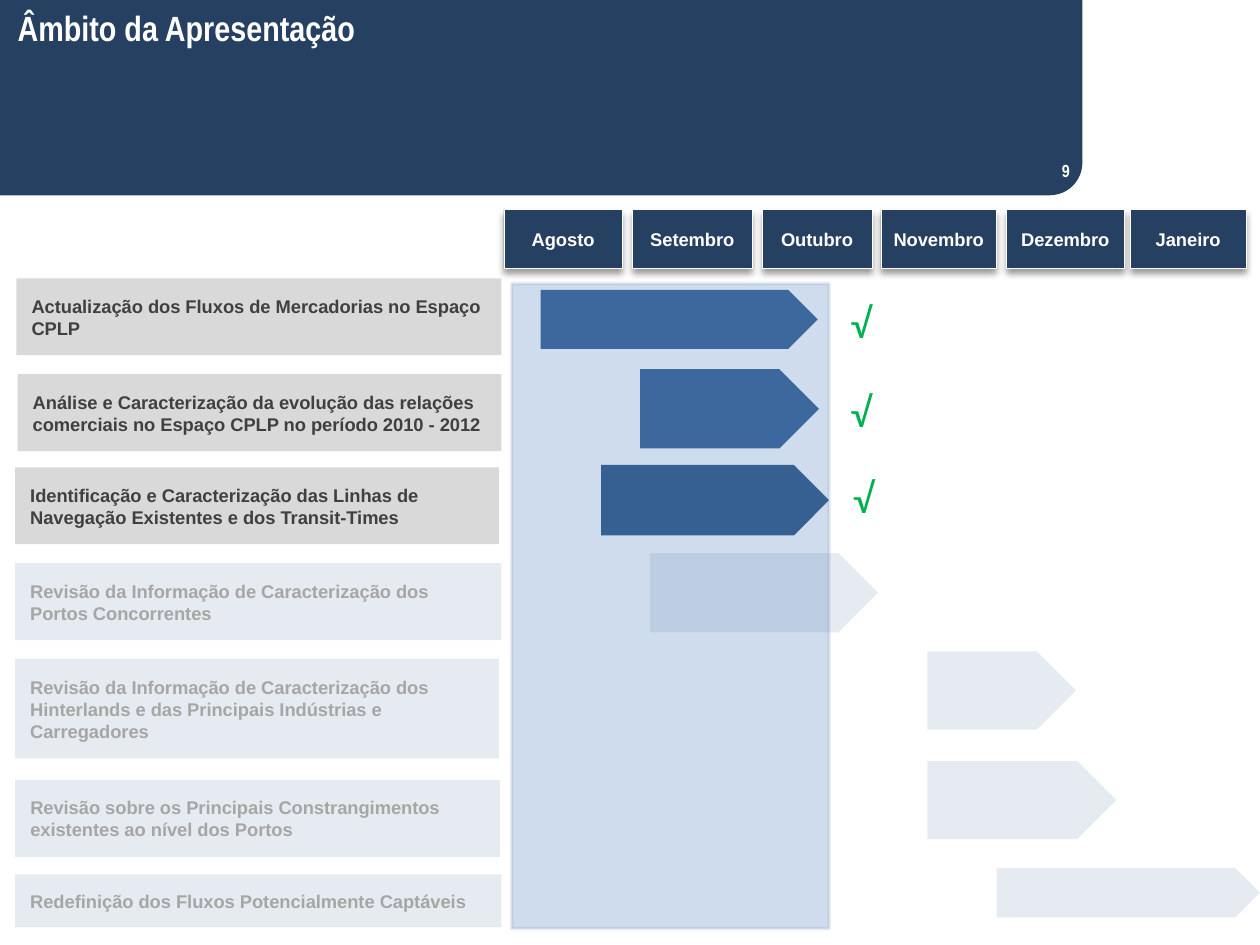
from dataclasses import dataclass
from typing import Any, NamedTuple, Optional

from lxml import etree
from pptx import Presentation
from pptx.dml.color import RGBColor
from pptx.enum import shapes, text
from pptx.oxml import ns
from pptx.util import Inches, Pt


@dataclass(frozen=True)
class Theme:
    navy: str = "254061"
    blue: str = "376092"
    period: str = "4F81BD"
    period_edge: str = "3A5F8C"
    done: str = "D9D9D9"
    done_text: str = "404040"
    pending_text: str = "A6A6A6"
    white: str = "FFFFFF"
    check: str = "00B050"
    faded: int = 12
    body_font: str = "Arial"
    head_font: str = "Arial Narrow"
    check_font: str = "Calibri"
    title_size: float = 20
    number_size: float = 10
    body_size: float = 10.5
    check_size: float = 24


class Box(NamedTuple):
    left: float
    top: float
    width: float
    height: float


class Month(NamedTuple):
    name: str
    left: float
    width: float


class Task(NamedTuple):
    label: str
    place: Box
    bar: Box
    check: Optional[tuple[float, float]] = None
    in_front: bool = False


THEME = Theme()
SHAPE = shapes.MSO_SHAPE
MIDDLE = text.MSO_ANCHOR.MIDDLE
MONTHS = [
    Month("Agosto", 4, 0.94),
    Month("Setembro", 5.02, 0.95),
    Month("Outubro", 6.05, 0.87),
    Month("Novembro", 6.99, 0.92),
    Month("Dezembro", 7.99, 0.93),
    Month("Janeiro", 8.97, 0.92),
]
TASKS = [
    Task("Actualização dos Fluxos de Mercadorias no Espaço CPLP",
         Box(0.13, 2.21, 3.85, 0.61), Box(4.29, 2.3, 2.2, 0.47), (6.65, 2.3)),
    Task("Análise e Caracterização da evolução das relações comerciais "
         "no Espaço CPLP no período 2010 - 2012",
         Box(0.14, 2.97, 3.84, 0.61), Box(5.08, 2.93, 1.42, 0.63), (6.65, 3.01)),
    Task("Identificação e Caracterização das Linhas de Navegação Existentes "
         "e dos Transit-Times",
         Box(0.12, 3.71, 3.84, 0.61), Box(4.77, 3.69, 1.81, 0.56), (6.67, 3.69), True),
    Task("Revisão da Informação de Caracterização dos Portos Concorrentes",
         Box(0.12, 4.47, 3.86, 0.61), Box(5.16, 4.39, 1.81, 0.63)),
    Task("Revisão da Informação de Caracterização dos Hinterlands "
         "e das Principais Indústrias e Carregadores",
         Box(0.12, 5.23, 3.84, 0.79), Box(7.36, 5.17, 1.18, 0.62)),
    Task("Revisão sobre os Principais Constrangimentos existentes ao nível dos Portos",
         Box(0.12, 6.19, 3.85, 0.61), Box(7.36, 6.04, 1.5, 0.62)),
    Task("Redefinição dos Fluxos Potencialmente Captáveis",
         Box(0.12, 6.94, 3.86, 0.42), Box(7.91, 6.89, 2.09, 0.39)),
]


def inches(box: Box) -> list[int]:
    return [Inches(length) for length in box]


def set_alpha(owner: Any, percent: int) -> None:
    color = owner.find(".//" + ns.qn("a:srgbClr"))
    etree.SubElement(color, ns.qn("a:alpha"), val=str(percent * 1000))


def add_block(slide: Any, kind: Any, box: Box, color: str, alpha: int = 100) -> Any:
    block = slide.shapes.add_shape(kind, *inches(box))
    block.shadow.inherit = False
    block.fill.solid()
    block.fill.fore_color.rgb = RGBColor.from_string(color)
    if alpha < 100:
        set_alpha(block._element.spPr.find(ns.qn("a:solidFill")), alpha)
    block.line.fill.background()
    return block


def set_line(block: Any, color: str, width: float) -> None:
    block.line.color.rgb = RGBColor.from_string(color)
    block.line.width = Pt(width)


def add_shadow(block: Any) -> None:
    effects = block._element.spPr.find(ns.qn("a:effectLst"))
    shadow = etree.SubElement(
        effects, ns.qn("a:outerShdw"), blurRad=str(Pt(4)), dist=str(Pt(3)),
        dir="5400000", rotWithShape="0")
    etree.SubElement(shadow, ns.qn("a:srgbClr"), val="000000")
    set_alpha(shadow, 40)


def write(holder: Any, words: str, color: str, size: float, font: str,
          bold: bool = True, align: Any = text.PP_ALIGN.LEFT, **frame_format: Any) -> Any:
    frame = holder.text_frame
    for name, value in {"word_wrap": True, **frame_format}.items():
        setattr(frame, name, value)
    line = frame.paragraphs[0]
    line.alignment = align
    run = line.add_run()
    run.text = words
    for name, value in {"size": Pt(size), "name": font, "bold": bold}.items():
        setattr(run.font, name, value)
    run.font.color.rgb = RGBColor.from_string(color)
    return line


def add_header(slide: Any) -> None:
    add_block(slide, SHAPE.ROUND_2_DIAG_RECTANGLE, Box(0, 0, 8.59, 1.55), THEME.navy)
    add_block(slide, SHAPE.RECTANGLE, Box(0, 0, 7.64, 0.9), THEME.navy)
    number = slide.shapes.add_textbox(*inches(Box(6.26, 1.15, 2.33, 0.4)))
    write(number, "9", THEME.white, THEME.number_size, THEME.head_font,
          align=text.PP_ALIGN.RIGHT, vertical_anchor=MIDDLE)
    title = slide.shapes.title
    title.left, title.top, title.width, title.height = inches(Box(-0.12, 0, 7.6, 0.84))
    heading = write(title, "Âmbito da Apresentação", THEME.white, THEME.title_size,
                    THEME.head_font, vertical_anchor=text.MSO_ANCHOR.TOP,
                    auto_size=text.MSO_AUTO_SIZE.NONE)
    heading._p.get_or_add_pPr().set("marL", str(Inches(0.16)))
    slide.shapes._spTree.append(title._element)


def add_month(slide: Any, month: Month) -> None:
    tile = add_block(slide, SHAPE.RECTANGLE, Box(month.left, 1.66, month.width, 0.47),
                     THEME.navy)
    set_line(tile, THEME.white, 0.25)
    add_shadow(tile)
    write(tile, month.name, THEME.white, THEME.body_size, THEME.body_font,
          align=text.PP_ALIGN.CENTER, vertical_anchor=MIDDLE,
          margin_left=0, margin_right=0)


def add_label(slide: Any, task: Task) -> None:
    fill, alpha, ink = ((THEME.done, 100, THEME.done_text) if task.check
                        else (THEME.blue, THEME.faded, THEME.pending_text))
    label = add_block(slide, SHAPE.RECTANGLE, task.place, fill, alpha)
    margins = {f"margin_{side}": Inches(0.12) for side in ("left", "top", "right", "bottom")}
    write(label, task.label, ink, THEME.body_size, THEME.body_font,
          vertical_anchor=MIDDLE, auto_size=text.MSO_AUTO_SIZE.SHAPE_TO_FIT_TEXT, **margins)


def add_bar(slide: Any, task: Task) -> None:
    add_block(slide, SHAPE.PENTAGON, task.bar, THEME.blue,
              100 if task.check else THEME.faded)


def add_period(slide: Any) -> None:
    period = add_block(slide, SHAPE.RECTANGLE, Box(4.06, 2.25, 2.52, 5.12), THEME.period, 27)
    set_line(period, THEME.period_edge, 2)
    set_alpha(period._element.spPr.find(ns.qn("a:ln")), 11)


def add_check(slide: Any, left: float, top: float) -> None:
    check = slide.shapes.add_textbox(*inches(Box(left, top, 0.39, 0.51)))
    write(check, "√", THEME.check, THEME.check_size, THEME.check_font, bold=False,
          auto_size=text.MSO_AUTO_SIZE.SHAPE_TO_FIT_TEXT)


def main() -> None:
    deck = Presentation()
    deck.slide_width, deck.slide_height = Inches(10), Inches(7.5)
    slide = deck.slides.add_slide(deck.slide_layouts[5])
    add_header(slide)
    for month in MONTHS:
        add_month(slide, month)
    for task in TASKS:
        add_label(slide, task)
    for task in TASKS:
        if not task.in_front:
            add_bar(slide, task)
    add_period(slide)
    for task in TASKS:
        if task.in_front:
            add_bar(slide, task)
        if task.check:
            add_check(slide, *task.check)
    deck.save("out.pptx")


if __name__ == "__main__":
    main()
